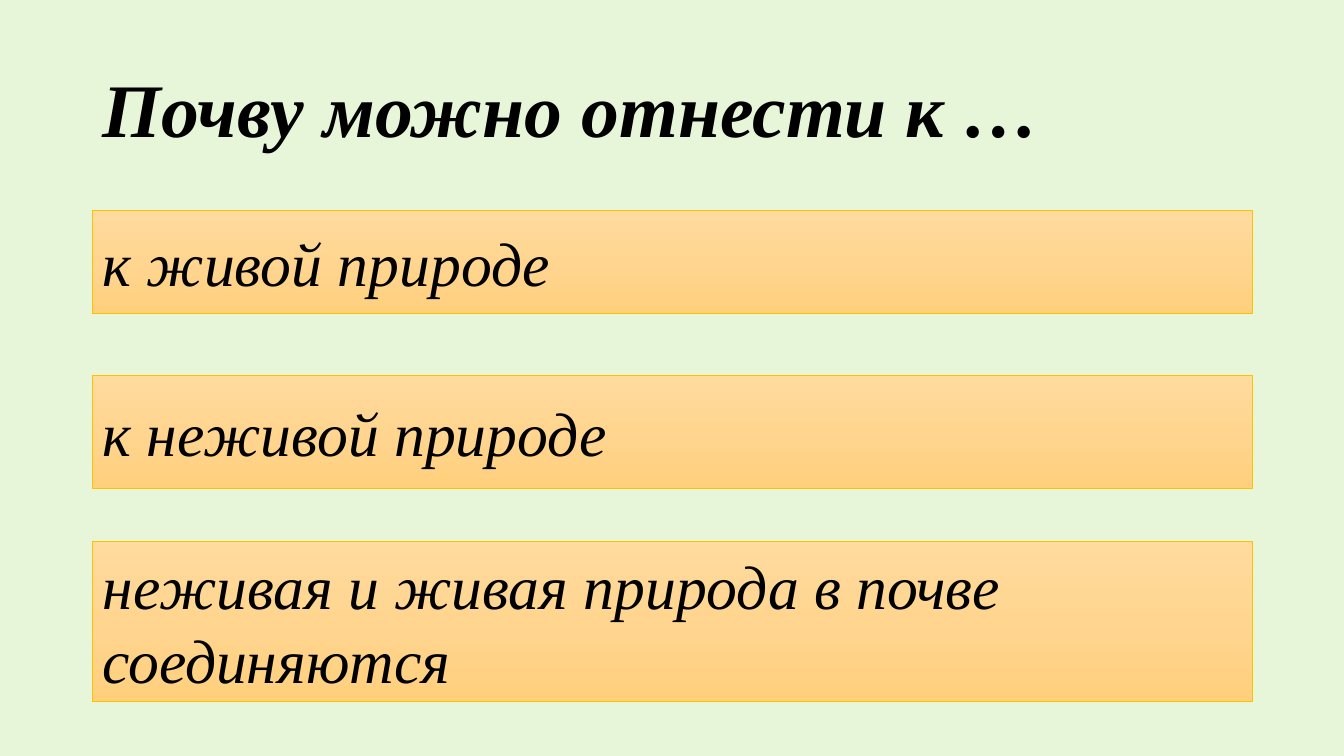
from copy import deepcopy

from pptx import Presentation
from pptx.dml.color import RGBColor
from pptx.enum.shapes import MSO_SHAPE
from pptx.enum.text import MSO_ANCHOR, MSO_AUTO_SIZE, PP_ALIGN
from pptx.util import Inches, Pt

QUESTION = "Почву можно отнести к …"
ANSWERS = [
    ("к живой природе", 2.09, 1.02),
    ("к неживой природе", 3.72, 1.12),
    ("неживая и живая природа в почве соединяются", 5.37, 1.59),
]


def color(code):
    return RGBColor.from_string(code)


def write(frame, text, size=44, bold=False, italic=True, ink="000000",
          font="Times New Roman", spacing=1.0):
    frame.word_wrap = True
    frame.auto_size = MSO_AUTO_SIZE.NONE
    frame.vertical_anchor = MSO_ANCHOR.MIDDLE
    paragraph = frame.paragraphs[0]
    paragraph.alignment = PP_ALIGN.LEFT
    paragraph.line_spacing = spacing
    run = paragraph.add_run()
    run.text = text
    run.font.name = font
    run.font.size = Pt(size)
    run.font.bold = bold
    run.font.italic = italic
    run.font.color.rgb = color(ink)


class QuizSlide:
    left, width = Inches(0.92), Inches(11.5)
    background = "E7F5D8"
    border = "FFC000"
    gradient = [(0, "FFDB9E"), (0.5, "FFD590"), (1, "FFD07C")]

    def __init__(self, deck):
        self.slide = deck.slides.add_slide(deck.slide_layouts[5])
        fill = self.slide.background.fill
        fill.solid()
        fill.fore_color.rgb = color(self.background)

    def question(self, text, top, height):
        title = self.slide.shapes.title
        title.left, title.width = self.left, self.width
        title.top, title.height = Inches(top), Inches(height)
        write(title.text_frame, text, size=54, bold=True, spacing=0.9)

    def answer(self, text, top, height):
        button = self.slide.shapes.add_shape(
            MSO_SHAPE.ACTION_BUTTON_CUSTOM,
            self.left, Inches(top), self.width, Inches(height))
        button.shadow.inherit = False
        self.shade(button.fill)
        button.line.color.rgb = color(self.border)
        button.line.width = Pt(0.5)
        write(button.text_frame, text)

    def shade(self, fill):
        fill.gradient()
        fill.gradient_angle = 270
        stop_list = fill._fill._gradFill.gsLst
        stop_list.insert(1, deepcopy(stop_list[0]))
        for stop, (position, code) in zip(fill.gradient_stops, self.gradient):
            stop.position = position
            stop.color.rgb = color(code)


def main():
    deck = Presentation()
    deck.slide_width, deck.slide_height = Inches(13.33), Inches(7.5)
    quiz = QuizSlide(deck)
    quiz.question(QUESTION, 0.4, 1.45)
    for text, top, height in ANSWERS:
        quiz.answer(text, top, height)
    deck.save("out.pptx")


if __name__ == "__main__":
    main()
